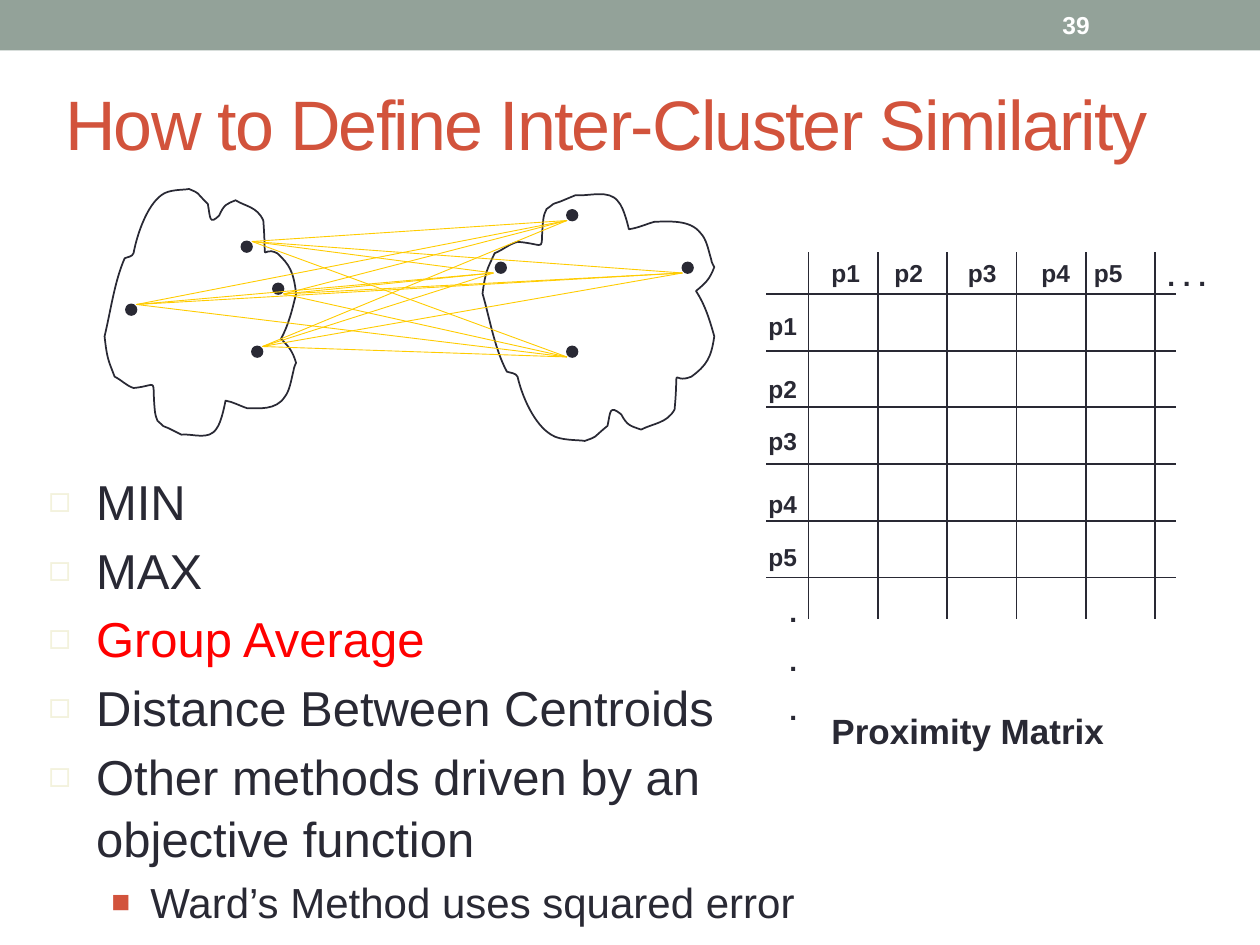
from dataclasses import dataclass
from itertools import product
from typing import Any

from pptx import Presentation
from pptx import util as u
from pptx.dml.color import RGBColor
from pptx.enum import shapes, text
from pptx.oxml import ns
from lxml import etree


@dataclass(frozen=True)
class Theme:
    font: str = "Arial"
    ink: str = "292934"
    accent: str = "D2533C"
    band: str = "93A299"
    pale: str = "F3F2DC"
    highlight: str = "FF0000"
    link: str = "FFCC00"
    white: str = "FFFFFF"
    title: int = 40
    body: int = 28
    sub: int = 24
    caption: int = 20
    dots: int = 16
    label: int = 14


THEME = Theme()
COLUMNS, ROWS = 120, 90  # grid over a 10 by 7.5 inch slide
CELL = u.Inches(10) / COLUMNS

# Cluster outline in inches: a start point, then three points per curve
OUTLINE = [
    (0.99, 2.05),
    (0.91, 2.23), (0.88, 2.46), (0.83, 2.67), (0.85, 2.85), (0.86, 2.86), (0.91, 2.99),
    (0.97, 3.02), (1, 3.06), (1.06, 3.08), (1.27, 3.06), (1.2, 2.98), (1.23, 3.27),
    (1.23, 3.29), (1.24, 3.31), (1.25, 3.34), (1.32, 3.4), (1.27, 3.37), (1.34, 3.4),
    (1.38, 3.42), (1.44, 3.45), (1.44, 3.45), (1.53, 3.44), (1.66, 3.5), (1.72, 3.4),
    (1.76, 3.35), (1.79, 3.18), (1.79, 3.18), (1.85, 3.19), (1.9, 3.22), (1.96, 3.24),
    (2.05, 3.24), (2.19, 3.26), (2.26, 3.15), (2.3, 3.1), (2.31, 3.02), (2.33, 2.94),
    (2.33, 2.92), (2.35, 2.88), (2.35, 2.88), (2.32, 2.78), (2.29, 2.75), (2.23, 2.69),
    (2.29, 2.58), (2.32, 2.46), (2.35, 2.33), (2.33, 2.16), (2.3, 2.1), (2.2, 2.01),
    (2.06, 1.94), (2.12, 2.15), (2.09, 1.75), (2.04, 1.64), (1.95, 1.64), (1.87, 1.59),
    (1.8, 1.62), (1.78, 1.62), (1.74, 1.71), (1.66, 1.79), (1.67, 1.73), (1.65, 1.62),
    (1.54, 1.51), (1.59, 1.54), (1.5, 1.5), (1.46, 1.51), (1.34, 1.5), (1.28, 1.55),
    (1.17, 1.63), (1.09, 1.85), (1.06, 2.01), (1.05, 2.04), (1.01, 2.04), (0.99, 2.05),
]


def grid(*lengths):
    return [u.Emu(round(length * CELL)) for length in lengths]


def add_text(paragraph, words, size, color=THEME.ink, bold=False, spacing=None):
    run = paragraph.add_run()
    run.text = words
    run.font.name = THEME.font
    run.font.size = u.Pt(size)
    run.font.bold = bold
    run.font.color.rgb = RGBColor.from_string(color)
    if spacing is not None:
        run.font._element.set("spc", str(spacing * 100))


@dataclass
class Sketch:
    theme: Theme
    slide: Any

    def place(self, shape, box):
        shape.left, shape.top, shape.width, shape.height = grid(*box)

    def paint(self, shape, fill=None, line=None):
        shape.shadow.inherit = False
        if fill:
            shape.fill.solid()
            shape.fill.fore_color.rgb = RGBColor.from_string(fill)
        else:
            shape.fill.background()
        if line:
            shape.line.color.rgb = RGBColor.from_string(line)
            shape.line.width = u.Pt(1)
        else:
            shape.line.fill.background()

    def preset(self, kind, box, fill, line=None):
        self.paint(self.slide.shapes.add_shape(kind, *grid(*box)), fill, line)

    def line(self, start, end, color, width):
        connector = self.slide.shapes.add_connector(
            shapes.MSO_CONNECTOR.STRAIGHT, *grid(*start, *end))
        connector.line.color.rgb = RGBColor.from_string(color)
        connector.line.width = u.Pt(width)
        etree.SubElement(connector.element.spPr, ns.qn("a:effectLst"))

    def cluster(self, points):
        points = [(u.Inches(x), u.Inches(y)) for x, y in points]
        builder = self.slide.shapes.build_freeform(*points[0])
        builder.add_line_segments(points[1:], close=True)
        shape = builder.convert_to_shape()
        self.paint(shape, line=self.theme.ink)
        # Turn each three straight segments into one Bezier curve
        segments = list(shape.element.iter(ns.qn("a:lnTo")))
        for first in range(0, len(segments) - 2, 3):
            curve, *others = segments[first:first + 3]
            curve.tag = ns.qn("a:cubicBezTo")
            for other in others:
                curve.append(other[0])
                other.getparent().remove(other)

    def label(self, box, lines, size, color=None, anchor=text.MSO_ANCHOR.TOP):
        frame = self.slide.shapes.add_textbox(*grid(*box)).text_frame
        frame.word_wrap = True
        frame.vertical_anchor = anchor
        for index, words in enumerate(lines):
            paragraph = frame.add_paragraph() if index else frame.paragraphs[0]
            paragraph.space_before = u.Pt(9 if index else 0)
            add_text(paragraph, words, size, color or self.theme.ink, bold=True)

    def title(self, box, words):
        shape = self.slide.shapes.title
        self.place(shape, box)
        frame = shape.text_frame
        frame.auto_size = text.MSO_AUTO_SIZE.NONE
        frame.vertical_anchor = text.MSO_ANCHOR.MIDDLE
        frame.paragraphs[0].alignment = text.PP_ALIGN.LEFT
        add_text(frame.paragraphs[0], words, self.theme.title, self.theme.accent, spacing=-1)

    def bullets(self, box, items):
        shape = self.slide.placeholders[1]
        self.place(shape, box)
        frame = shape.text_frame
        frame.auto_size = text.MSO_AUTO_SIZE.NONE
        for index, (words, level, color) in enumerate(items):
            paragraph = frame.add_paragraph() if index else frame.paragraphs[0]
            paragraph.level = level
            paragraph.line_spacing = 1.05
            paragraph.space_before = paragraph.space_after = u.Pt(2)
            margin, hanging, mark, mark_color, size = (
                (0.81, 0.31, "■", self.theme.accent, self.theme.sub) if level else
                (0.38, 0.38, "◻", self.theme.pale, self.theme.body))
            properties = paragraph._p.get_or_add_pPr()
            properties.set("marL", str(u.Inches(margin)))
            properties.set("indent", str(-u.Inches(hanging)))
            tint = etree.SubElement(properties, ns.qn("a:buClr"))
            etree.SubElement(tint, ns.qn("a:srgbClr"), val=mark_color)
            etree.SubElement(properties, ns.qn("a:buSzPct"), val="75000")
            etree.SubElement(properties, ns.qn("a:buFont"), typeface=self.theme.font)
            etree.SubElement(properties, ns.qn("a:buChar"), char=mark)
            add_text(paragraph, words, size, color)


def main():
    presentation = Presentation()
    presentation.slide_width, presentation.slide_height = grid(COLUMNS, ROWS)
    slide = presentation.slides.add_slide(presentation.slide_layouts[1])
    sketch = Sketch(THEME, slide)

    # Header band, slide number and title
    sketch.preset(shapes.MSO_SHAPE.RECTANGLE, (0, 0, COLUMNS, 4.8), THEME.band)
    sketch.label((100, 0.25, 14, 4.3), ["39"], THEME.label, THEME.white,
                 text.MSO_ANCHOR.MIDDLE)
    sketch.title((5, 8, 108.75, 7.25), "How to Define Inter-Cluster Similarity")

    # Proximity matrix: six rules each way
    for index in range(6):
        column, row = 77 + 6.6 * index, 28 + 5.4 * index
        sketch.line((column, 24), (column, 59), THEME.ink, 1)
        sketch.line((73, row), (112, row), THEME.ink, 1)
    row_tops, column_lefts = (29, 35, 40, 46, 51), (78, 84, 91, 98, 103)
    for number, (top, left) in enumerate(zip(row_tops, column_lefts), 1):
        sketch.label((72, top, 7, 4), [f"p{number}"], THEME.label)
        sketch.label((left, 24, 7, 4), [f"p{number}"], THEME.label)
    sketch.label((110, 24, 7, 4.4), [". . ."], THEME.dots)
    sketch.label((74, 56, 7, 14), ["."] * 3, THEME.dots)
    sketch.label((78, 67, 33, 5.2), ["Proximity Matrix"], THEME.caption)

    # Two clusters: the right one is the left one flipped and stretched
    sketch.cluster(OUTLINE)
    sketch.cluster([(3.83 + (x - 0.83) * 1.21, 5 - y) for x, y in OUTLINE])
    left_points = [(24, 33), (26, 27), (12, 29), (23, 23)]
    right_points = [(54, 33), (47.2, 25), (54, 20), (65, 25)]
    for point in left_points + right_points:
        sketch.preset(shapes.MSO_SHAPE.OVAL, (*point, 1, 1), THEME.ink, THEME.ink)

    # Every left point linked with every right point
    left_ends = [(25, 33), (27, 28), (13, 29), (24, 23)]
    right_ends = [(54, 34), (47, 26), (54, 21), (65, 26)]
    for start, end in product(left_ends, right_ends):
        sketch.line(start, end, THEME.link, 0.5)

    # Methods
    sketch.bullets((3.4, 44, 76, 41), [
        ("MIN", 0, THEME.ink),
        ("MAX", 0, THEME.ink),
        ("Group Average", 0, THEME.highlight),
        ("Distance Between Centroids", 0, THEME.ink),
        ("Other methods driven by an objective function", 0, THEME.ink),
        ("Ward’s Method uses squared error", 1, THEME.ink),
    ])
    presentation.save("out.pptx")


if __name__ == "__main__":
    main()
